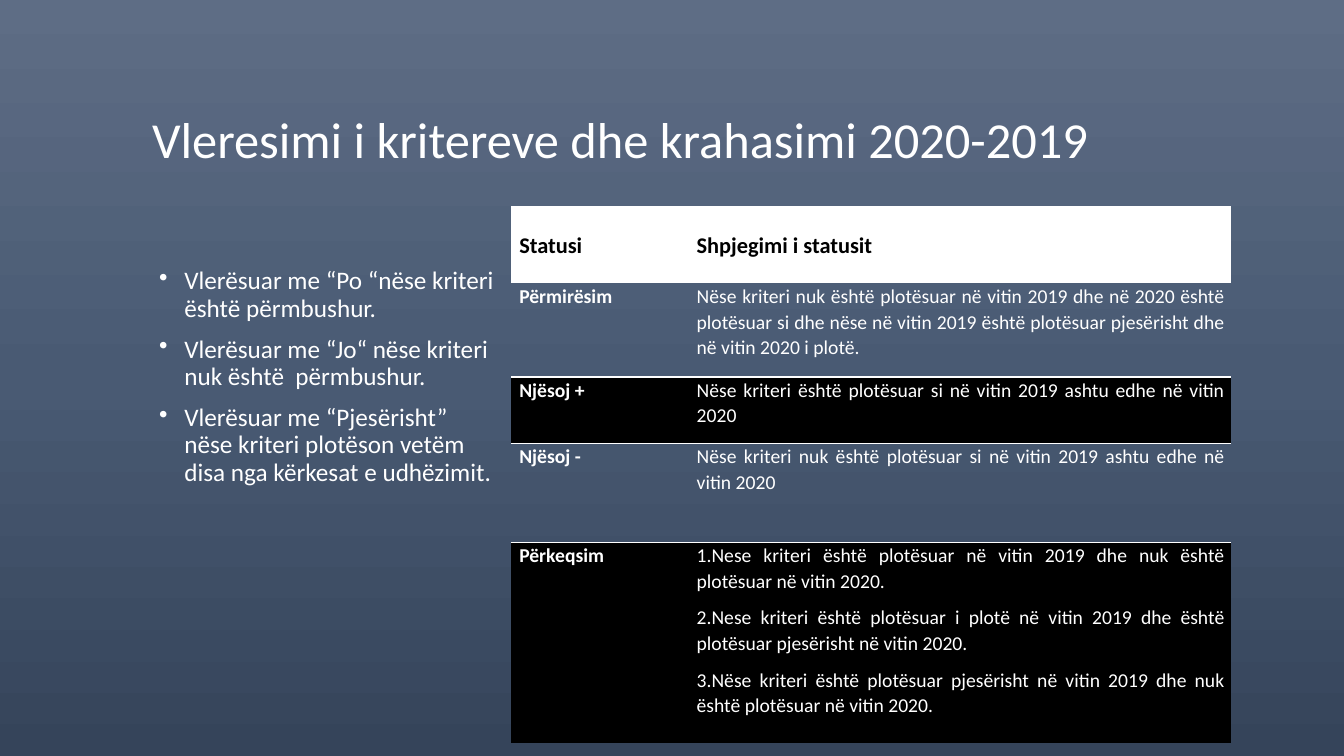
from copy import deepcopy
from dataclasses import dataclass

from lxml.etree import SubElement
from pptx import Presentation
from pptx.dml.color import RGBColor
from pptx.enum.text import MSO_ANCHOR, PP_ALIGN
from pptx.oxml import parse_xml
from pptx.oxml.ns import nsdecls, qn
from pptx.util import Inches, Pt


@dataclass(frozen=True)
class Theme:
    """Hold the colours, font and type sizes."""
    font: str = "Calibri"
    white: str = "FFFFFF"
    black: str = "000000"
    shades: tuple = ("5E6D85", "495A73", "35445A")
    title: int = 36
    body: int = 18
    head: int = 16
    cell: int = 14


THEME = Theme()
TITLE = "Vleresimi i kritereve dhe krahasimi 2020-2019"
POINTS = [
    "Vlerësuar me “Po “nëse kriteri është përmbushur.",
    "Vlerësuar me “Jo“ nëse kriteri nuk është  përmbushur.",
    "Vlerësuar me “Pjesërisht” nëse kriteri plotëson vetëm disa nga kërkesat e udhëzimit.",
]
HEADS = ["Statusi", "Shpjegimi i statusit"]
ROWS = [
    ("Përmirësim", ["Nëse kriteri nuk është plotësuar në vitin 2019 dhe në 2020 është plotësuar "
                    "si dhe nëse në vitin 2019 është plotësuar pjesërisht dhe në vitin 2020 i plotë."]),
    ("Njësoj +", ["Nëse kriteri është plotësuar si në vitin 2019 ashtu edhe në vitin 2020"]),
    ("Njësoj -", ["Nëse kriteri nuk është plotësuar si në vitin 2019 ashtu edhe në vitin 2020"]),
    ("Përkeqsim", [
        "Nese kriteri është plotësuar në vitin 2019 dhe nuk është plotësuar në vitin 2020.",
        "Nese kriteri është plotësuar i plotë në vitin 2019 dhe është plotësuar pjesërisht në vitin 2020.",
        "Nëse kriteri është plotësuar pjesërisht në vitin 2019 dhe nuk është plotësuar në vitin 2020.",
    ]),
]
WIDTHS = [1.76, 5.38]
HEIGHTS = [0.77, 0.93, 0.66, 0.98, 1.99]
PLAIN = "{2D5ABB26-0587-4C30-8999-92F81FD0307C}"


def write(frame, lines, size, color=THEME.white, bold=False, align=PP_ALIGN.LEFT,
          line=0.9, before=0, after=0, mark=None, left=0, hang=0):
    """Fill a text frame with formatted paragraphs."""
    frame.word_wrap = True
    for n, text in enumerate(lines):
        para = frame.paragraphs[0] if n == 0 else frame.add_paragraph()
        para.alignment, para.line_spacing = align, line
        para.space_before, para.space_after = Pt(before), Pt(after)
        run = para.add_run()
        run.text = text
        font = run.font
        font.name, font.size, font.bold = THEME.font, Pt(size), bold
        font.color.rgb = RGBColor.from_string(color)
        if mark:
            props = para._p.get_or_add_pPr()
            props.set("marL", str(Inches(left)))
            props.set("indent", str(Inches(-hang)))
            tag, key = ("a:buAutoNum", "type") if mark == "arabicPeriod" else ("a:buChar", "char")
            SubElement(props, qn(tag)).set(key, mark)


def paint(slide):
    """Paint the background with a vertical gradient."""
    fill = slide.background.fill
    fill.gradient()
    fill.gradient_angle = 270
    stops = next(slide.element.iter(qn("a:gsLst")))
    stops.append(deepcopy(stops[-1]))
    for n, (stop, shade) in enumerate(zip(fill.gradient_stops, THEME.shades)):
        stop.position = n / 2
        stop.color.rgb = RGBColor.from_string(shade)


def block(slide, box, lines, size, anchor=MSO_ANCHOR.TOP, **style):
    """Place a text box."""
    frame = slide.shapes.add_textbox(*map(Inches, box)).text_frame
    write(frame, lines, size, **style)
    frame.vertical_anchor = anchor


def edge(cell, side):
    """Draw a white line on one side of a cell."""
    cell._tc.get_or_add_tcPr().insert(0, parse_xml(
        f'<a:{side} {nsdecls("a")} w="{Pt(1)}"><a:solidFill>'
        f'<a:srgbClr val="{THEME.white}"/></a:solidFill></a:{side}>'))


def dress(cell, lines, fill=None, top=0, **style):
    """Set the text, margins and fill of a cell."""
    cell.margin_left, cell.margin_right = Inches(0.08), Inches(0.06)
    cell.margin_top, cell.margin_bottom = Inches(top), Inches(0.11)
    write(cell.text_frame, lines, align=PP_ALIGN.JUSTIFY, line=1.07, after=8, **style)
    if fill:
        cell.fill.solid()
        cell.fill.fore_color.rgb = RGBColor.from_string(fill)
    else:
        cell.fill.background()


def grid(slide, box):
    """Place the status table."""
    frame = slide.shapes.add_table(len(HEIGHTS), len(WIDTHS), *map(Inches, box))
    next(frame.element.iter(qn("a:tableStyleId"))).text = PLAIN
    table = frame.table
    table.horz_banding = False
    for col, width in zip(table.columns, WIDTHS):
        col.width = Inches(width)
    for row, height in zip(table.rows, HEIGHTS):
        row.height = Inches(height)
    for n, text in enumerate(HEADS):
        cell = table.cell(0, n)
        dress(cell, [text], THEME.white, top=0.11, size=THEME.head, color=THEME.black, bold=True)
        cell.vertical_anchor = MSO_ANCHOR.MIDDLE
    for n, (state, notes) in enumerate(ROWS, 1):
        dark = n % 2 == 0
        fill = THEME.black if dark else None
        marks = {"mark": "arabicPeriod", "hang": 0.38} if len(notes) > 1 else {}
        dress(table.cell(n, 0), [state], fill, size=THEME.cell, bold=True)
        dress(table.cell(n, 1), notes, fill, size=THEME.cell, **marks)
        for col in range(len(WIDTHS)):
            edge(table.cell(n, col), "lnT" if dark else "lnB")


def main():
    """Build the slide and save it."""
    deck = Presentation()
    deck.slide_width, deck.slide_height = Inches(13.33), Inches(7.5)
    slide = deck.slides.add_slide(deck.slide_layouts[6])
    paint(slide)
    block(slide, (1.41, 0.82, 10.52, 1.18), [TITLE], THEME.title, MSO_ANCHOR.MIDDLE)
    block(slide, (1.48, 2.61, 3.59, 4.89), POINTS, THEME.body,
          before=10, mark="•", left=0.25, hang=0.25)
    grid(slide, (5.07, 2.04, sum(WIDTHS), sum(HEIGHTS)))
    deck.save("out.pptx")


if __name__ == "__main__":
    main()
